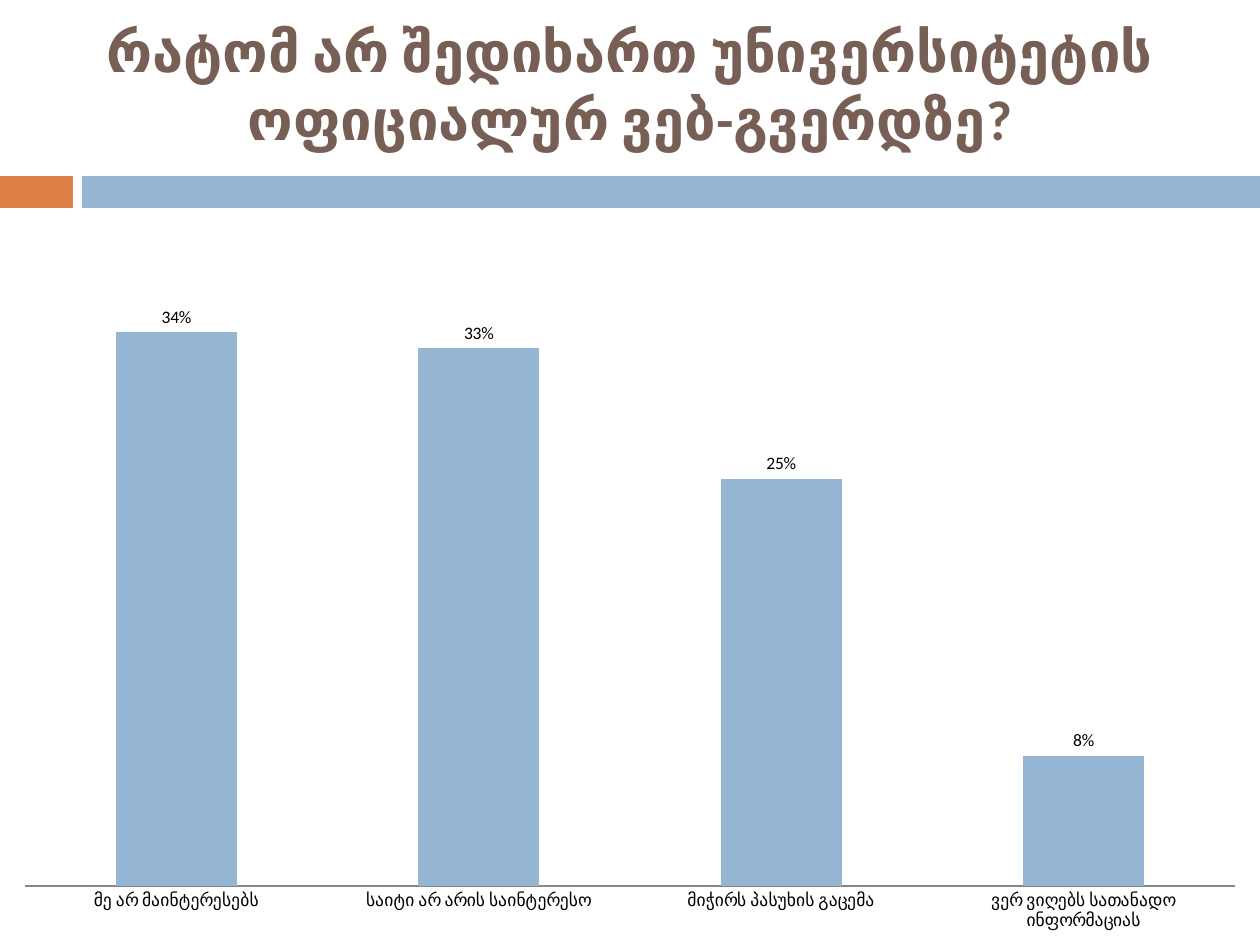
from pptx import Presentation
from pptx.chart.data import CategoryChartData
from pptx.dml.color import RGBColor
from pptx.enum.chart import XL_CHART_TYPE, XL_LABEL_POSITION, XL_TICK_MARK
from pptx.enum.shapes import MSO_SHAPE
from pptx.enum.text import MSO_ANCHOR, PP_ALIGN
from pptx.util import Pt

FONT = "Calibri"
BLUE = "94B6D2"
ORANGE = "DD8047"
BROWN = "775F55"
TITLE = "რატომ არ შედიხართ უნივერსიტეტის ოფიციალურ ვებ-გვერდზე?"
REASONS = {
    "მე არ მაინტერესებს": 0.34,
    "საიტი არ არის საინტერესო": 0.33,
    "მიჭირს პასუხის გაცემა": 0.25,
    "ვერ ვიღებს სათანადო ინფორმაციას": 0.08,
}


def px(*sizes):
    """Turn pixels at 126 to the inch into a list of EMU."""
    return [round(size * 914400 / 126) for size in sizes]


def tint(code):
    """Turn a hex string into a colour."""
    return RGBColor.from_string(code)


def style(font, size, code, bold=False):
    """Set the face, size, colour and weight of a font."""
    font.name = FONT
    font.size = Pt(size)
    font.bold = bold
    font.color.rgb = tint(code)


def add_band(slide, box, code):
    """Add a plain filled band."""
    band = slide.shapes.add_shape(MSO_SHAPE.RECTANGLE, *px(*box))
    band.shadow.inherit = False
    band.fill.solid()
    band.fill.fore_color.rgb = tint(code)
    band.line.fill.background()


def add_title(slide, box, text):
    """Add the centred heading."""
    frame = slide.shapes.add_textbox(*px(*box)).text_frame
    frame.word_wrap = True
    frame.vertical_anchor = MSO_ANCHOR.MIDDLE
    para = frame.paragraphs[0]
    para.alignment = PP_ALIGN.CENTER
    run = para.add_run()
    run.text = text
    style(run.font, 32, BROWN, True)


def add_bars(slide, box, reasons):
    """Add the column chart of reasons."""
    data = CategoryChartData(number_format="0%")
    data.categories = reasons.keys()
    data.add_series("Series 1", reasons.values())
    kind = XL_CHART_TYPE.COLUMN_CLUSTERED
    chart = slide.shapes.add_chart(kind, *px(*box), data).chart
    chart.has_legend = False
    chart.has_title = False
    style(chart.font, 10, "000000")

    scale = chart.value_axis
    scale.visible = False
    scale.has_major_gridlines = False
    scale.minimum_scale = 0
    scale.maximum_scale = 0.4
    scale.tick_labels.number_format = "0%"
    scale.tick_labels.number_format_is_linked = False

    base = chart.category_axis
    base.major_tick_mark = XL_TICK_MARK.NONE
    base.format.line.color.rgb = tint("868686")

    plot = chart.plots[0]
    plot.vary_by_categories = False
    plot.gap_width = 150
    plot.overlap = -25
    fill = plot.series[0].format.fill
    fill.solid()
    fill.fore_color.rgb = tint(BLUE)

    plot.has_data_labels = True
    labels = plot.data_labels
    labels.show_value = True
    labels.number_format = "0%"
    labels.number_format_is_linked = False
    labels.position = XL_LABEL_POSITION.OUTSIDE_END
    style(labels.font, 10, "000000")


def main():
    """Build and save the slide."""
    deck = Presentation()
    deck.slide_width, deck.slide_height = px(1260, 945)
    slide = deck.slides.add_slide(deck.slide_layouts[6])
    add_band(slide, (0, 176, 73, 32), ORANGE)
    add_band(slide, (82, 176, 1178, 32), BLUE)
    add_title(slide, (0, 0, 1260, 168), TITLE)
    add_bars(slide, (0, 220, 1260, 725), REASONS)
    deck.save("out.pptx")


if __name__ == "__main__":
    main()
